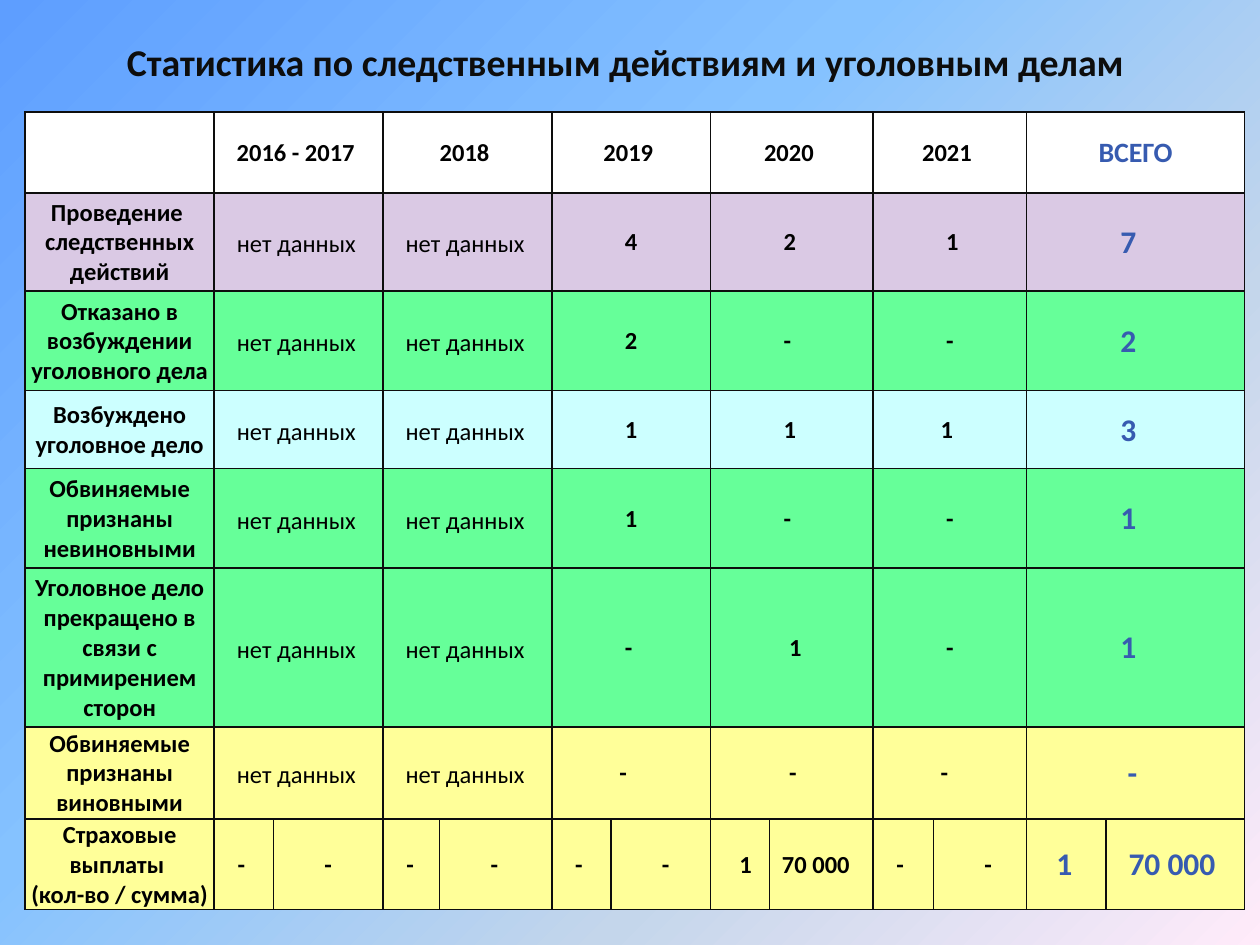
from dataclasses import dataclass

from lxml import etree
from pptx import Presentation, util as u
from pptx.dml.color import RGBColor
from pptx.enum import text
from pptx.oxml.ns import qn

BLACK = RGBColor(0, 0, 0)
INK = RGBColor(0x0D, 0x0D, 0x0D)
BLUE = RGBColor(0x37, 0x5B, 0xB0)
WHITE = RGBColor(0xFF, 0xFF, 0xFF)
LILAC = RGBColor(0xDA, 0xC9, 0xE4)
GREEN = RGBColor(0x66, 0xFF, 0x99)
CYAN = RGBColor(0xCC, 0xFF, 0xFF)
YELLOW = RGBColor(0xFF, 0xFF, 0x99)
SKY = [
    (0, RGBColor(0x5E, 0x9E, 0xFF)),
    (40, RGBColor(0x85, 0xC2, 0xFF)),
    (70, RGBColor(0xC4, 0xD6, 0xEB)),
    (100, RGBColor(0xFF, 0xEB, 0xFA)),
]

FONT = "Calibri"
WIDE, HIGH = u.Inches(10), u.Inches(7.5)
COLS = [1.5, 0.47, 0.87, 0.45, 0.89, 0.47, 0.79, 0.47, 0.82, 0.48, 0.74, 0.63, 1.1]
HEADS = ["2016 - 2017 ", "2018 ", "2019 ", "2020 ", "2021 ", "ВСЕГО"]
NONE = "нет данных"
STEP = 0.226  # indent unit, as a share of the text size


@dataclass
class Look:
    size: float = 14
    color: RGBColor = BLACK
    bold: bool = True


@dataclass
class Row:
    label: str
    fill: RGBColor
    height: float
    values: list[str]
    steps: tuple[int, ...] = (13, 13, 13, 13)


BODY, PLAIN = Look(), Look(bold=False)
HEAD, TOTAL = Look(16, BLUE), Look(18, BLUE)
TOP = 0.64
ROWS = [
    Row("Проведение \nследственных действий", LILAC, 0.78, ["4", "2", "1", "7"]),
    Row("Отказано в возбуждении уголовного дела", GREEN, 0.79, ["2", "-", "-", "2"]),
    Row("Возбуждено уголовное дело", CYAN, 0.62, ["1", "1", "1", "3"], (13, 13, 12, 13)),
    Row("Обвиняемые признаны невиновными", GREEN, 0.79, ["1", "-", "-", "1"]),
    Row("Уголовное дело прекращено в связи с примирением сторон", GREEN, 1.26,
        ["-", "1", "-", "1"], (13, 14, 13, 13)),
    Row("Обвиняемые признаны виновными", YELLOW, 0.73, ["-", "-", "-", "-"], (12, 14, 12, 14)),
]
PAY = Row("Страховые выплаты \n(кол-во / сумма)", YELLOW, 0.72,
          ["-", "-", "-", "-", "-", "-", "1", "70 000", "-", "-", "1", "70 000"],
          (4, 9, 4, 9, 4, 9, 5, 2, 4, 9, 4, 3))


def style(para, look: Look) -> None:
    font = para.font
    font.name, font.size, font.bold = FONT, u.Pt(look.size), look.bold
    font.color.rgb = look.color


def tint(parent, color: RGBColor) -> None:
    etree.SubElement(parent, qn("a:srgbClr"), val=str(color))


def paint(slide) -> None:
    """Fill the background with the diagonal gradient."""
    fill = slide.background.fill
    fill.gradient()
    fill.gradient_angle = 315
    stops = next(slide.element.iter(qn("a:gsLst")))
    for old in list(stops):
        stops.remove(old)
    for share, color in SKY:
        tint(etree.SubElement(stops, qn("a:gs"), pos=str(share * 1000)), color)


def frame(cell, fill: RGBColor) -> None:
    """Give a cell its borders, fill, insets and anchor."""
    props = cell._tc.get_or_add_tcPr()
    for side in "LRTB":
        line = etree.SubElement(props, qn("a:ln" + side), w=str(u.Pt(1)))
        tint(etree.SubElement(line, qn("a:solidFill")), INK)
    cell.fill.solid()
    cell.fill.fore_color.rgb = fill
    cell.margin_left = cell.margin_right = cell.margin_top = u.Inches(0.01)
    cell.margin_bottom = 0
    cell.vertical_anchor = text.MSO_ANCHOR.MIDDLE


def write(cell, words: str, look: Look = BODY, steps: float = 0) -> None:
    """Centre the words, or set them left after an indent of some steps."""
    cell.text = words
    for para in cell.text_frame.paragraphs:
        style(para, look)
        para.alignment = text.PP_ALIGN.LEFT if steps else text.PP_ALIGN.CENTER
    if steps:
        cell.margin_left = u.Inches(0.01) + u.Pt(steps * STEP * look.size)


def draw_title(slide) -> None:
    box = slide.shapes.add_textbox(0, int(HIGH * 0.03), WIDE, int(HIGH * 0.07))
    body = box.text_frame
    body.word_wrap = True
    body.vertical_anchor = text.MSO_ANCHOR.MIDDLE
    para = body.paragraphs[0]
    para.text = "Статистика по следственным действиям и уголовным делам "
    para.alignment = text.PP_ALIGN.CENTER
    style(para, Look(21.6, INK))


def draw_table(slide) -> None:
    fills = [WHITE, *(row.fill for row in ROWS), PAY.fill]
    highs = [TOP, *(row.height for row in ROWS), PAY.height]
    grid = slide.shapes.add_table(
        len(highs), len(COLS), u.Inches(0.2), u.Inches(0.89),
        u.Inches(sum(COLS)), u.Inches(sum(highs))).table
    grid.first_row = grid.horz_banding = False
    for col, wide in zip(grid.columns, COLS):
        col.width = u.Inches(wide)
    for r, (high, fill) in enumerate(zip(highs, fills)):
        grid.rows[r].height = u.Inches(high)
        for c in range(len(COLS)):
            frame(grid.cell(r, c), fill)

    last = len(highs) - 1
    pairs = range(1, len(COLS), 2)
    for r in range(last):
        for c in pairs:
            grid.cell(r, c).merge(grid.cell(r, c + 1))
    for c, head in zip(pairs, HEADS):
        write(grid.cell(0, c), head, HEAD if c == pairs[-1] else BODY)

    for r, row in enumerate(ROWS, 1):
        write(grid.cell(r, 0), row.label)
        for c in pairs[:2]:
            cell = grid.cell(r, c)
            write(cell, NONE, PLAIN, 3.86)
            cell.margin_top = u.Inches(0.04)
        for c, value, steps in zip(pairs[2:], row.values, row.steps):
            write(grid.cell(r, c), value, TOTAL if c == pairs[-1] else BODY, steps)

    write(grid.cell(last, 0), PAY.label)
    for c, (value, steps) in enumerate(zip(PAY.values, PAY.steps), 1):
        write(grid.cell(last, c), value, TOTAL if c >= pairs[-1] else BODY, steps)


def main() -> None:
    deck = Presentation()
    deck.slide_width, deck.slide_height = WIDE, HIGH
    slide = deck.slides.add_slide(deck.slide_layouts[6])
    paint(slide)
    draw_title(slide)
    draw_table(slide)
    deck.save("out.pptx")


if __name__ == "__main__":
    main()
